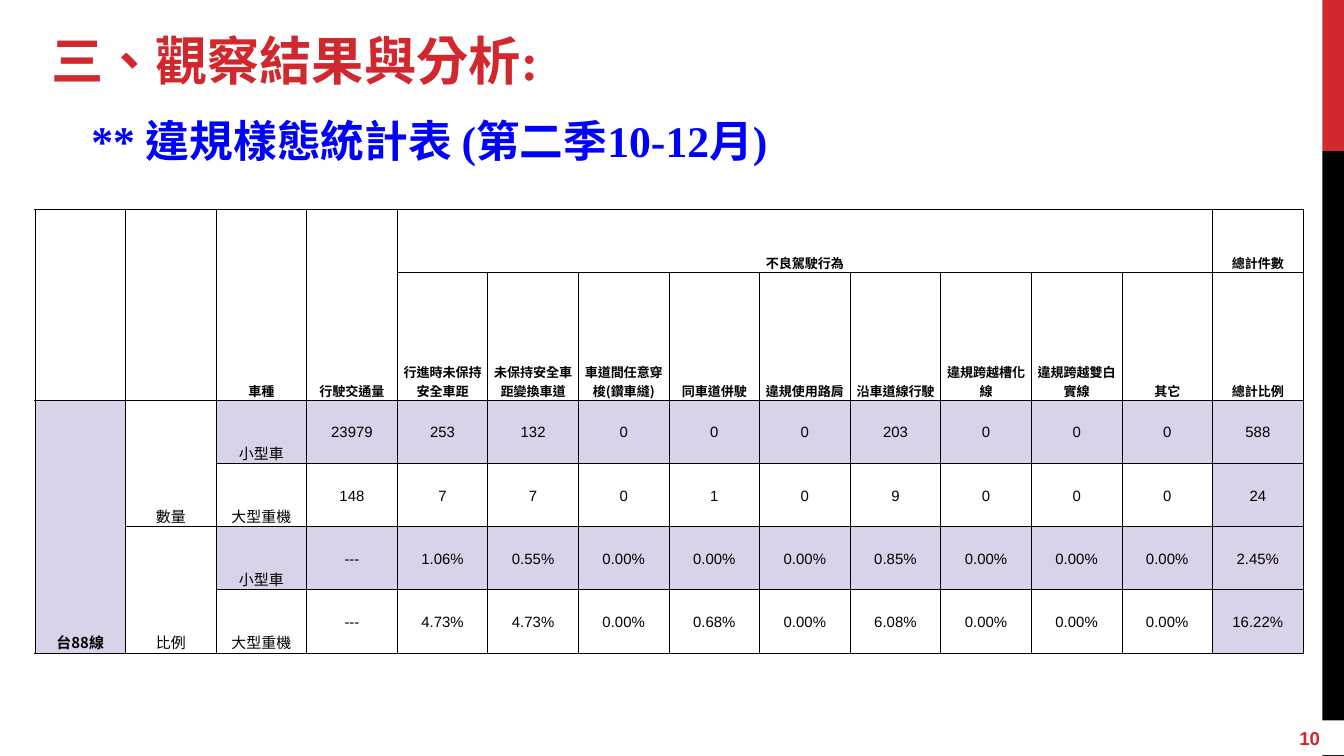
"""Build the slide with the table of traffic violations for the second quarter."""
from typing import NamedTuple

from lxml.etree import SubElement
from pptx import Presentation
from pptx.dml.color import RGBColor
from pptx.enum.shapes import MSO_SHAPE
from pptx.enum.text import MSO_ANCHOR, MSO_AUTO_SIZE, PP_ALIGN
from pptx.oxml.ns import qn
from pptx.util import Inches, Pt

COLORS = {"red": "D1282E", "black": "000000", "white": "FFFFFF", "blue": "0000FF", "lilac": "D9D2E9"}
SERIF, SANS, HAN = "Times New Roman", "Arial", "Noto Sans CJK TC"
WIDTH = 10
HEIGHT = WIDTH * 9 / 16


class Box(NamedTuple):
    left: float
    top: float
    width: float
    height: float


class Span(NamedTuple):
    top: int
    left: int
    bottom: int
    right: int


BARS = [(Box(9.84, 0, 0.16, HEIGHT / 5), "red"), (Box(9.84, HEIGHT / 5, 0.16, HEIGHT * 4 / 5), "black")]
HEIGHTS = [0.47, 0.95, 0.47, 0.47, 0.47, 0.47]
GRID = Box(0.26, 1.56, 9.44, sum(HEIGHTS))
ROWS = [
    ["", "", "車種", "行駛交通量", "不良駕駛行為"] + [""] * 8 + ["總計件數"],
    [""] * 4 + ["行進時未保持安全車距", "未保持安全車距變換車道", "車道間任意穿梭(鑽車縫)", "同車道併駛",
                "違規使用路肩", "沿車道線行駛", "違規跨越槽化線", "違規跨越雙白實線", "其它", "總計比例"],
    ["台88線", "數量", "小型車", "23979", "253", "132", "0", "0", "0", "203", "0", "0", "0", "588"],
    ["", "", "大型重機", "148", "7", "7", "0", "1", "0", "9", "0", "0", "0", "24"],
    ["", "比例", "小型車", "---", "1.06%", "0.55%", "0.00%", "0.00%", "0.00%", "0.85%",
     "0.00%", "0.00%", "0.00%", "2.45%"],
    ["", "", "大型重機", "---", "4.73%", "4.73%", "0.00%", "0.68%", "0.00%", "6.08%",
     "0.00%", "0.00%", "0.00%", "16.22%"],
]
SPANS = [Span(0, col, 1, col) for col in range(4)] + [
    Span(0, 4, 0, 12), Span(2, 0, 5, 0), Span(2, 1, 3, 1), Span(4, 1, 5, 1)]


def color(name: str) -> RGBColor:
    return RGBColor.from_string(COLORS[name])


def place(box: Box) -> list:
    return [Inches(value) for value in box]


def style(par, size: float, face: str, tint: str, bold: bool, align=PP_ALIGN.LEFT) -> None:
    par.alignment = align
    font = par.font
    font.size, font.name, font.bold = Pt(size), face, bold
    font.color.rgb = color(tint)
    for run in par.runs:
        run._r.get_or_add_rPr().set("lang", "zh-TW")


def write(shape, text: str, size: float, face: str, tint: str, anchor=MSO_ANCHOR.TOP) -> None:
    frame = shape.text_frame
    frame.text = text
    frame.word_wrap = True
    frame.auto_size = MSO_AUTO_SIZE.NONE
    frame.vertical_anchor = anchor
    frame.margin_left = frame.margin_right = Inches(0.1)
    frame.margin_top = frame.margin_bottom = Inches(0.1)
    style(frame.paragraphs[0], size, face, tint, True)


def block(slide, box: Box, fill: str):
    shape = slide.shapes.add_shape(MSO_SHAPE.RECTANGLE, *place(box))
    shape.shadow.inherit = False
    shape.fill.solid()
    shape.fill.fore_color.rgb = color(fill)
    shape.line.fill.background()
    return shape


def border(cell) -> None:
    props = cell._tc.get_or_add_tcPr()
    for side in ("lnL", "lnR", "lnT", "lnB"):
        line = SubElement(props, qn(f"a:{side}"), w=str(Pt(0.5)))
        SubElement(SubElement(line, qn("a:solidFill")), qn("a:srgbClr"), val=COLORS["black"])


def fill_cell(cell, row: int, col: int, text: str) -> None:
    head, label = row < 2, col < 3
    cell.margin_left = cell.margin_right = cell.margin_top = Inches(0.01)
    cell.margin_bottom = 0
    cell.vertical_anchor = MSO_ANCHOR.BOTTOM if head or label else MSO_ANCHOR.MIDDLE
    border(cell)
    if not head and (col in (0, 13) or (row in (2, 4) and col > 1)):
        cell.fill.solid()
        cell.fill.fore_color.rgb = color("lilac")
    else:
        cell.fill.background()
    cell.text = text
    style(cell.text_frame.paragraphs[0], 7 if head else 8, HAN if head or label else SANS,
          "black", head or col == 0, PP_ALIGN.CENTER)


def add_grid(slide) -> None:
    count = len(ROWS[0])
    table = slide.shapes.add_table(len(ROWS), count, *place(GRID)).table
    table.first_row = table.horz_banding = False
    for col in table.columns:
        col.width = Inches(GRID.width / count)
    for row, height in zip(table.rows, HEIGHTS):
        row.height = Inches(height)
    for row, texts in enumerate(ROWS):
        for col, text in enumerate(texts):
            fill_cell(table.cell(row, col), row, col, text)
    for span in SPANS:
        table.cell(span.top, span.left).merge(table.cell(span.bottom, span.right))


def main() -> None:
    deck = Presentation()
    deck.slide_width, deck.slide_height = Inches(WIDTH), Inches(HEIGHT)
    slide = deck.slides.add_slide(deck.slide_layouts[5])
    for box, fill in BARS:
        block(slide, box, fill)
    number = block(slide, Box(9.57, 5.36, 0.43, 0.26), "white")
    write(number, "10", 10, SANS, "red", MSO_ANCHOR.MIDDLE)
    note = slide.shapes.add_textbox(*place(Box(0.26, 0.75, 9.32, 0.63)))
    write(note, "** 違規樣態統計表 (第二季10-12月)", 23.4, SERIF, "blue")
    note.text_frame.margin_left = Inches(0.42)
    title = slide.shapes.title
    title.left, title.top, title.width, title.height = place(Box(0.28, 0.11, 9.3, 0.63))
    write(title, "三、觀察結果與分析:", 28, SERIF, "red")
    add_grid(slide)
    deck.save("out.pptx")


if __name__ == "__main__":
    main()
